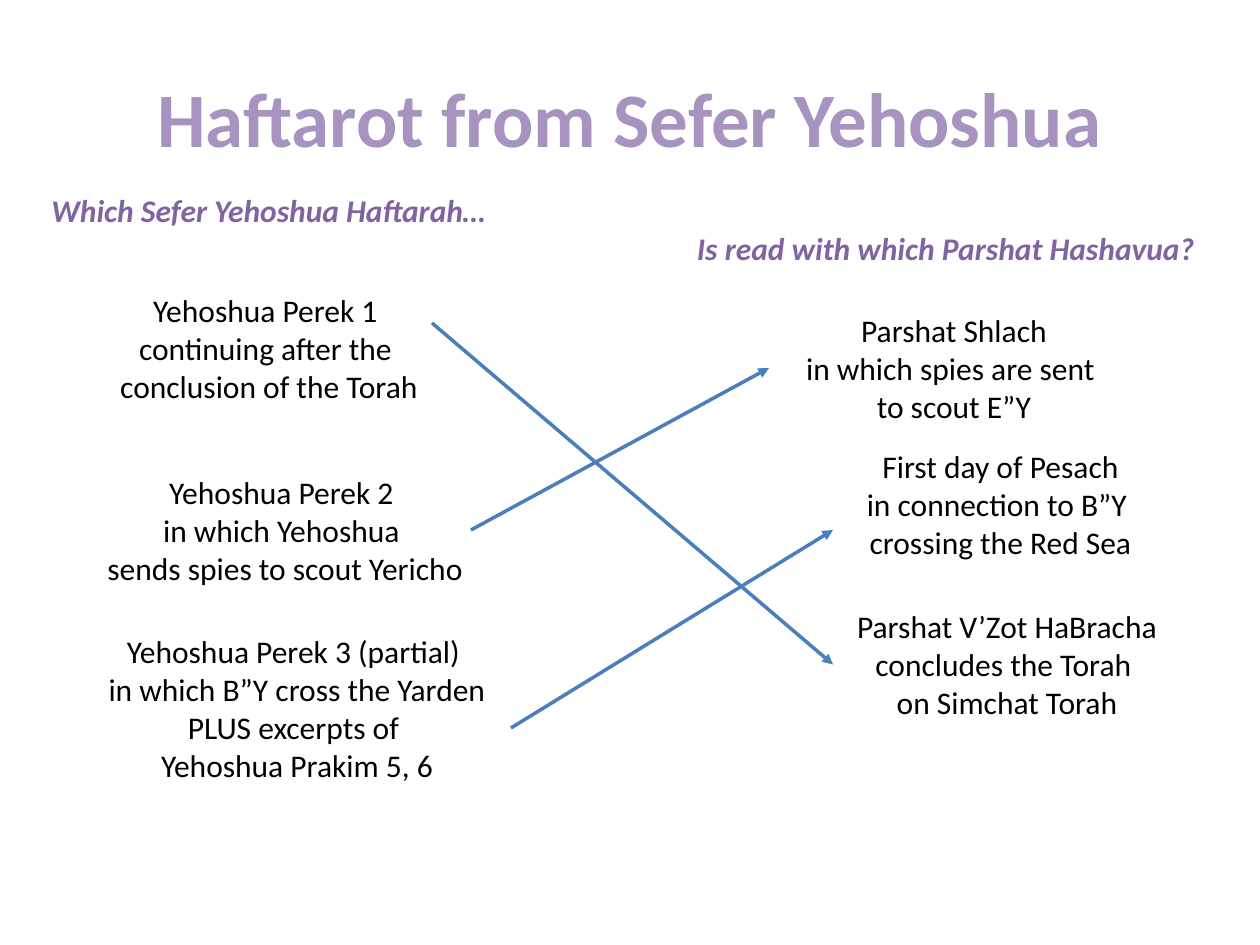
"""Build a matching slide that pairs Haftarot from Sefer Yehoshua with their readings."""
import dataclasses

import pptx
import pptx.dml.color
import pptx.enum.shapes
import pptx.enum.text
import pptx.oxml
import pptx.oxml.ns
import pptx.util

ALIGN = pptx.enum.text.PP_ALIGN
LEFT_SIDE = 1


@dataclasses.dataclass(frozen=True)
class Theme:
    font: str = "Calibri"
    title_size: int = 44
    text_size: int = 18
    line_width: int = 2
    title_color: str = "A793BF"
    heading_color: str = "8064A2"
    text_color: str = "000000"
    arrow_color: str = "4B7EBC"


class SlideBuilder:
    def __init__(self, slide, theme):
        self.slide = slide
        self.theme = theme

    def px(self, *lengths):
        return [pptx.util.Emu(round(length * 914400 / 126)) for length in lengths]

    def add_run(self, paragraph, text, size, color, bold=False, italic=False):
        run = paragraph.add_run()
        run.text = text
        run.font.name = self.theme.font
        run.font.size = pptx.util.Pt(size)
        run.font.bold = bold
        run.font.italic = italic
        run.font.color.rgb = pptx.dml.color.RGBColor.from_string(color)

    def title(self, box, text):
        shape = self.slide.shapes.title
        shape.left, shape.top, shape.width, shape.height = self.px(*box)
        shape.text_frame.vertical_anchor = pptx.enum.text.MSO_ANCHOR.MIDDLE
        paragraph = shape.text_frame.paragraphs[0]
        paragraph.alignment = ALIGN.CENTER
        self.add_run(paragraph, text, self.theme.title_size, self.theme.title_color, bold=True)

    def text_box(self, box, lines, alignments, color, emphasis=False):
        shape = self.slide.shapes.add_textbox(*self.px(*box))
        frame = shape.text_frame
        frame.word_wrap = True
        for index, (line, alignment) in enumerate(zip(lines, alignments)):
            paragraph = frame.add_paragraph() if index else frame.paragraphs[0]
            paragraph.alignment = alignment
            self.add_run(paragraph, line, self.theme.text_size, color, emphasis, emphasis)
        return shape

    def headings(self, box, left, right):
        return self.text_box(box, [left, right], [ALIGN.LEFT, ALIGN.RIGHT],
                             self.theme.heading_color, emphasis=True)

    def entry(self, box, lines):
        return self.text_box(box, lines, [ALIGN.CENTER] * len(lines), self.theme.text_color)

    def arrow(self, start, end, target=None):
        connector = self.slide.shapes.add_connector(
            pptx.enum.shapes.MSO_CONNECTOR.STRAIGHT, *self.px(*start, *end))
        if target is not None:
            connector.end_connect(target, LEFT_SIDE)
        connector.line.width = pptx.util.Pt(self.theme.line_width)
        connector.line.color.rgb = pptx.dml.color.RGBColor.from_string(self.theme.arrow_color)
        head = pptx.oxml.parse_xml(
            f'<a:tailEnd {pptx.oxml.ns.nsdecls("a")} type="triangle"/>')
        connector.line._get_or_add_ln().append(head)
        effects = pptx.oxml.parse_xml(f'<a:effectLst {pptx.oxml.ns.nsdecls("a")}/>')
        connector._element.spPr.append(effects)


def main():
    presentation = pptx.Presentation()
    presentation.slide_width = pptx.util.Inches(10)
    presentation.slide_height = pptx.util.Inches(7.5)
    slide = presentation.slides.add_slide(presentation.slide_layouts[5])
    builder = SlideBuilder(slide, Theme())

    builder.title((63, 38, 1134, 157), "Haftarot from Sefer Yehoshua")
    builder.headings((39, 185, 1168, 89), "Which Sefer Yehoshua Haftarah…",
                     "Is read with which Parshat Hashavua?")

    haftarot = [
        ((76, 285, 386, 127),
         ["Yehoshua Perek 1 ", "continuing after the ", "conclusion of the Torah"]),
        ((35, 467, 500, 127),
         ["Yehoshua Perek 2 ", "in which Yehoshua ", "sends spies to scout Yericho"]),
        ((42, 626, 510, 166),
         ["Yehoshua Perek 3 (partial) ", "in which B”Y cross the Yarden",
          "PLUS excerpts of ", "Yehoshua Prakim 5, 6"]),
    ]
    for box, lines in haftarot:
        builder.entry(box, lines)

    builder.entry((674, 305, 560, 127),
                  ["Parshat Shlach", "in which spies are sent ", "to scout E”Y"])
    builder.entry((822, 441, 357, 127),
                  ["First day of Pesach", "in connection to B”Y ", "crossing the Red Sea"])
    simchat_torah = builder.entry(
        (833, 601, 348, 127),
        ["Parshat V’Zot HaBracha", "concludes the Torah ", "on Simchat Torah"])

    builder.arrow((432, 323), (833, 664), simchat_torah)
    builder.arrow((471, 530), (769, 368))
    builder.arrow((511, 728), (833, 530))

    presentation.save("out.pptx")


if __name__ == "__main__":
    main()
